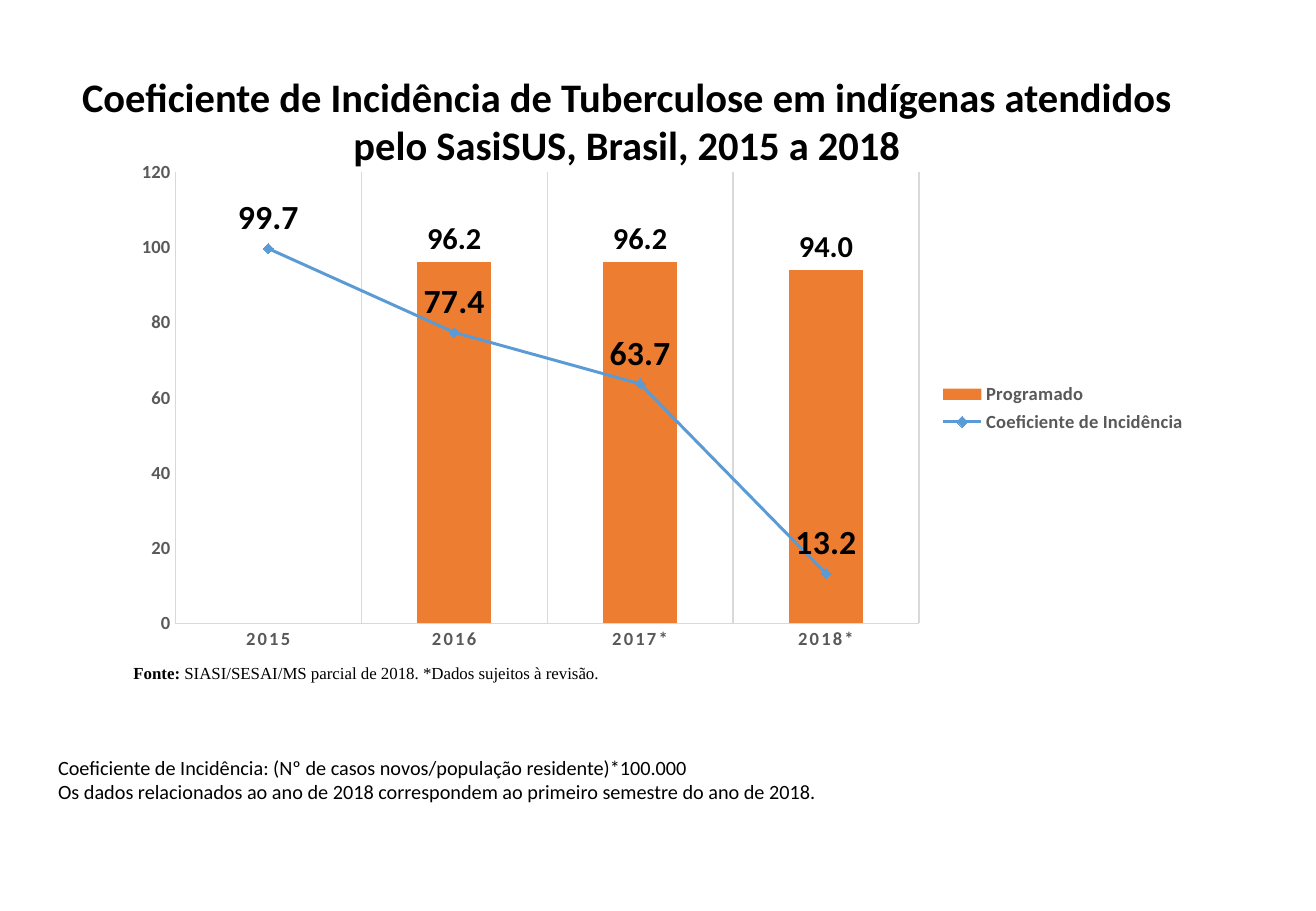
from pptx import Presentation
from pptx.chart.data import CategoryChartData
from pptx.dml.color import RGBColor
from pptx.enum.chart import XL_CHART_TYPE, XL_LABEL_POSITION, XL_LEGEND_POSITION, XL_MARKER_STYLE, XL_TICK_MARK
from pptx.enum.text import MSO_ANCHOR, MSO_AUTO_SIZE, PP_ALIGN
from pptx.oxml import parse_xml
from pptx.oxml.ns import nsdecls, qn
from pptx.util import Inches, Pt

BLACK = RGBColor(0x00, 0x00, 0x00)
GRAY = RGBColor(0x59, 0x59, 0x59)
LIGHT_GRAY = RGBColor(0xD9, 0xD9, 0xD9)
ORANGE = RGBColor(0xED, 0x7D, 0x31)
BLUE = RGBColor(0x5B, 0x9B, 0xD5)


def set_font(font, size, color=BLACK, bold=False, name="Calibri"):
    font.name = name
    font.size = Pt(size)
    font.bold = bold
    font.color.rgb = color


def set_line(line, color, width):
    line.color.rgb = color
    line.width = Pt(width)


presentation = Presentation()
presentation.slide_width = Inches(10.83)
presentation.slide_height = Inches(7.5)
slide = presentation.slides.add_slide(presentation.slide_layouts[5])

title = slide.shapes.title
title.left, title.top = Inches(0.38), Inches(0.54)
title.width, title.height = Inches(9.56), Inches(1.06)
title_frame = title.text_frame
title_frame.text = "Coeficiente de Incidência de Tuberculose em indígenas atendidos pelo SasiSUS, Brasil, 2015 a 2018"
title_frame.auto_size = MSO_AUTO_SIZE.NONE
title_frame.vertical_anchor = MSO_ANCHOR.TOP
title_frame.paragraphs[0].alignment = PP_ALIGN.CENTER
set_font(title_frame.paragraphs[0].font, 24, bold=True)

source_box = slide.shapes.add_textbox(Inches(1), Inches(5.4), Inches(7.59), Inches(0.27))
source_frame = source_box.text_frame
source_frame.word_wrap = True
source_frame.vertical_anchor = MSO_ANCHOR.MIDDLE
for text, bold in (("Fonte: ", True), ("SIASI/SESAI/MS parcial de 2018. *Dados sujeitos à revisão.", False)):
    run = source_frame.paragraphs[0].add_run()
    run.text = text
    set_font(run.font, 10, bold=bold, name="Times New Roman")

chart_data = CategoryChartData(number_format="0.0")
chart_data.categories = ["2015", "2016", "2017*", "2018*"]
chart_data.add_series("Programado", [None, 96.2, 96.2, 94])
chart_data.add_series("Coeficiente de Incidência", [99.7, 77.4, 63.7, 13.2])
chart = slide.shapes.add_chart(
    XL_CHART_TYPE.COLUMN_CLUSTERED, Inches(1), Inches(1.25), Inches(8.87), Inches(4.22), chart_data
).chart
chart.has_title = False
set_font(chart.font, 11, bold=True)

chart.has_legend = True
chart.legend.position = XL_LEGEND_POSITION.RIGHT
chart.legend.include_in_layout = False
set_font(chart.legend.font, 11, GRAY, True)

category_axis, value_axis = chart.category_axis, chart.value_axis
for axis in (category_axis, value_axis):
    axis.major_tick_mark = axis.minor_tick_mark = XL_TICK_MARK.NONE
    set_font(axis.tick_labels.font, 11, GRAY, True)
    set_line(axis.format.line, LIGHT_GRAY, 0.75)
category_axis.has_major_gridlines = True
set_line(category_axis.major_gridlines.format.line, LIGHT_GRAY, 0.75)
for properties in category_axis._element.iter(qn("a:defRPr")):
    properties.set("spc", "120")
value_axis.has_major_gridlines = False
value_axis.minimum_scale, value_axis.maximum_scale, value_axis.major_unit = 0, 120, 20
value_axis.tick_labels.number_format = "0"
value_axis.tick_labels.number_format_is_linked = False

plot_area = chart._chartSpace.chart.plotArea
for layout in plot_area.findall(qn("c:layout")):
    plot_area.remove(layout)
plot_area.insert(0, parse_xml(
    f'<c:layout {nsdecls("c")}><c:manualLayout><c:layoutTarget val="inner"/>'
    '<c:xMode val="edge"/><c:yMode val="edge"/><c:x val="0.05"/><c:y val="0.04"/>'
    '<c:w val="0.69"/><c:h val="0.88"/></c:manualLayout></c:layout>'
))

bar_chart = plot_area.find(qn("c:barChart"))
line_chart = parse_xml(
    f'<c:lineChart {nsdecls("c")}><c:grouping val="standard"/><c:varyColors val="0"/>'
    '<c:marker val="1"/></c:lineChart>'
)
incidence_element = bar_chart.findall(qn("c:ser"))[1]
for invert_element in incidence_element.findall(qn("c:invertIfNegative")):
    incidence_element.remove(invert_element)
line_chart.insert(2, incidence_element)
for axis_id in bar_chart.findall(qn("c:axId")):
    line_chart.append(parse_xml(f'<c:axId {nsdecls("c")} val="{axis_id.get("val")}"/>'))
bar_chart.addnext(line_chart)

column_plot, line_plot = chart.plots
column_plot.gap_width = 150
column_plot.vary_by_categories = False
planned, incidence = column_plot.series[0], line_plot.series[0]
planned.format.fill.solid()
planned.format.fill.fore_color.rgb = ORANGE
incidence.smooth = False
set_line(incidence.format.line, BLUE, 1.75)
incidence.marker.style = XL_MARKER_STYLE.DIAMOND
incidence.marker.size = 6
incidence.marker.format.fill.solid()
incidence.marker.format.fill.fore_color.rgb = BLUE
incidence.marker.format.line.color.rgb = BLUE

for series, size, position in (
    (planned, 18, XL_LABEL_POSITION.OUTSIDE_END),
    (incidence, 20, XL_LABEL_POSITION.ABOVE),
):
    labels = series.data_labels
    labels.show_value = True
    labels.number_format = "0.0"
    labels.number_format_is_linked = False
    labels.position = position
    set_font(labels.font, size, bold=True)

note_box = slide.shapes.add_textbox(Inches(0.38), Inches(6.17), Inches(10.1), Inches(0.5))
note_frame = note_box.text_frame
note_frame.word_wrap = True
note_frame.text = (
    "Coeficiente de Incidência: (Nº de casos novos/população residente)*100.000\n"
    "Os dados relacionados ao ano de 2018 correspondem ao primeiro semestre do ano de 2018."
)
for paragraph in note_frame.paragraphs:
    paragraph.alignment = PP_ALIGN.JUSTIFY
    set_font(paragraph.font, 12)

presentation.save("out.pptx")
